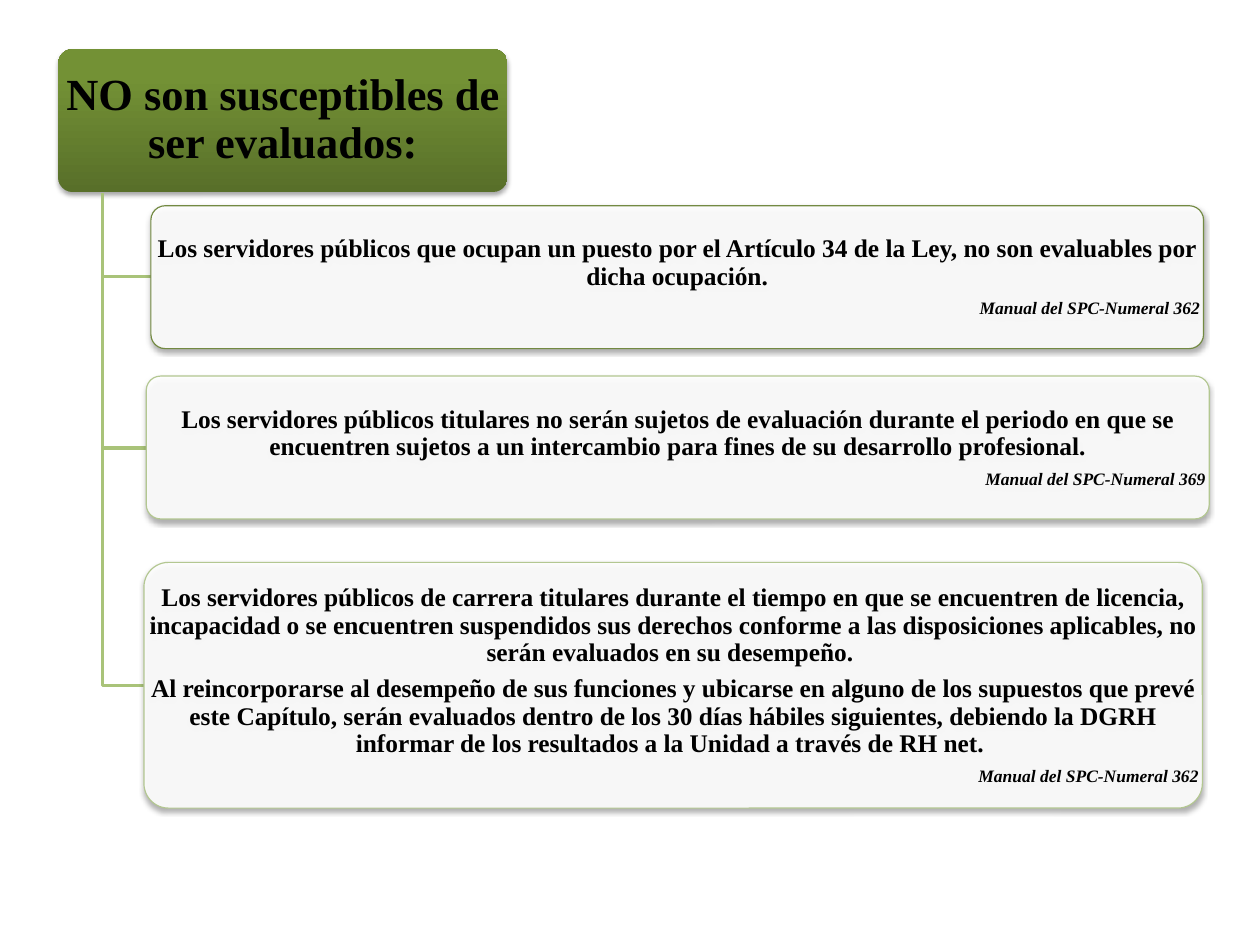
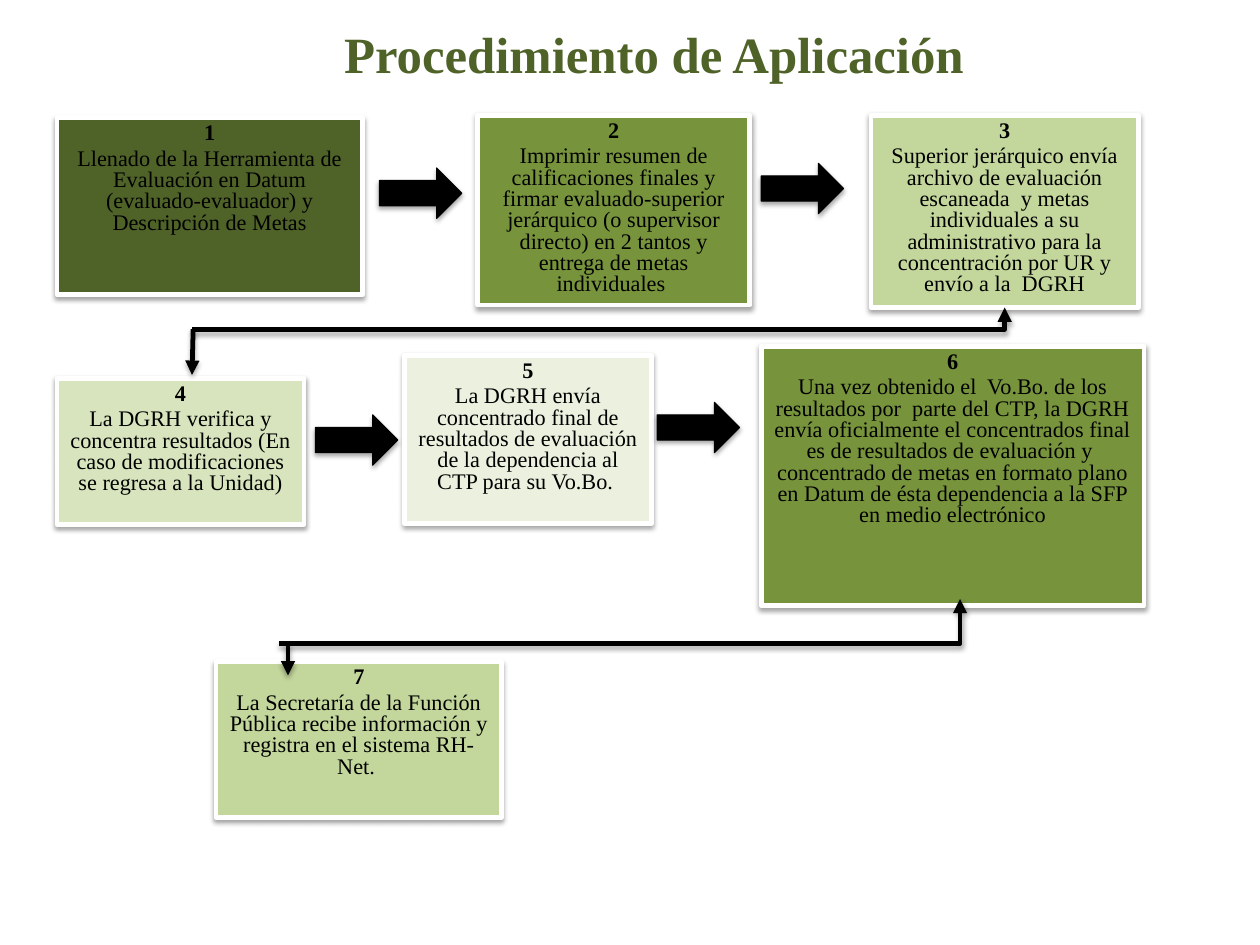
import lxml.etree
import pptx
import pptx.dml.color
import pptx.enum.shapes
import pptx.enum.text
import pptx.oxml.ns
import pptx.util

Inches, Pt = pptx.util.Inches, pptx.util.Pt
RGB = pptx.dml.color.RGBColor.from_string
Shape = pptx.enum.shapes.MSO_SHAPE
Connector = pptx.enum.shapes.MSO_CONNECTOR
Anchor = pptx.enum.text.MSO_ANCHOR
Align = pptx.enum.text.PP_ALIGN
qn = pptx.oxml.ns.qn


class Theme:
    font = "Times New Roman"
    black, white = "000000", "FFFFFF"
    dark, green, soft, pale, mist = "4F6228", "77933C", "C3D69B", "D7E4BD", "EBF1DE"
    header_top, header_bottom = "739135", "586F29"
    branch, first_outline, outline = "A9C379", "738A42", "B3C791"
    title, header, rule, step, citation = 32, 28, 16, 14, 11
    rule_spacing, step_spacing = 0.9, 0.8
    corner = 0.1


def finish(shape, line_color, line_width):
    """Set the outline (None for no line) and the soft shadow below the shape."""
    if line_color:
        shape.line.color.rgb = RGB(line_color)
        shape.line.width = Pt(line_width)
    else:
        shape.line.fill.background()
    effects = lxml.etree.SubElement(shape._element.spPr, qn("a:effectLst"))
    shadow = lxml.etree.SubElement(
        effects, qn("a:outerShdw"), blurRad=str(Pt(3.1)), dist=str(Pt(1.8)),
        dir="5400000", rotWithShape="0")
    color = lxml.etree.SubElement(shadow, qn("a:srgbClr"), val=Theme.black)
    lxml.etree.SubElement(color, qn("a:alpha"), val="35000")


def write(shape, entries, color=Theme.black, anchor=Anchor.TOP, spacing=1.0, gap=0):
    """Fill the shape with (text, size, bold, italic, alignment) paragraphs."""
    frame = shape.text_frame
    frame.word_wrap = True
    frame.vertical_anchor = anchor
    for index, (text, size, bold, italic, alignment) in enumerate(entries):
        paragraph = frame.add_paragraph() if index else frame.paragraphs[0]
        paragraph.text = text
        paragraph.alignment = alignment
        paragraph.line_spacing = spacing
        paragraph.space_before = Pt(gap if index else 0)
        paragraph.font.name = Theme.font
        paragraph.font.size = Pt(size)
        paragraph.font.bold = bold
        paragraph.font.italic = italic
        paragraph.font.color.rgb = RGB(color)


presentation = pptx.Presentation()
presentation.slide_width = pptx.util.Cm(28)
presentation.slide_height = pptx.util.Cm(21)
blank = presentation.slide_layouts[6]

# Slide 1: who is not evaluated
slide = presentation.slides.add_slide(blank)
trunk_x, trunk_top = 0.9, 1.69

header = slide.shapes.add_shape(Shape.ROUNDED_RECTANGLE, Inches(0.51), Inches(0.43),
                                Inches(3.93), Inches(1.25))
header.adjustments[0] = Theme.corner
header.fill.gradient()
header.fill.gradient_angle = 90
for stop, color, position in zip(header.fill.gradient_stops,
                                 (Theme.header_bottom, Theme.header_top), (0, 0.8)):
    stop.color.rgb = RGB(color)
    stop.position = position
finish(header, None, 0)
header.text_frame.margin_left = header.text_frame.margin_right = Inches(0.02)
write(header, [("NO son susceptibles de ser evaluados:", Theme.header, True, False, Align.CENTER)],
      anchor=Anchor.MIDDLE, spacing=Theme.rule_spacing)

# left, top, width, height, branch height, outline, rules, citation
rules = [
    (1.32, 1.8, 9.21, 1.25, 2.42, Theme.first_outline,
     ["Los servidores públicos que ocupan un puesto por el Artículo 34 de la Ley, "
      "no son evaluables por dicha ocupación."],
     "Manual del SPC-Numeral 362"),
    (1.28, 3.29, 9.3, 1.25, 3.92, Theme.outline,
     ["Los servidores públicos titulares no serán sujetos de evaluación durante el periodo "
      "en que se encuentren sujetos a un intercambio para fines de su desarrollo profesional."],
     "Manual del SPC-Numeral 369"),
    (1.26, 4.92, 9.26, 2.15, 6, Theme.outline,
     ["Los servidores públicos de carrera titulares durante el tiempo en que se encuentren de "
      "licencia, incapacidad o se encuentren suspendidos sus derechos conforme a las "
      "disposiciones aplicables, no serán evaluados en su desempeño. ",
      "Al reincorporarse al desempeño de sus funciones y ubicarse en alguno de los supuestos "
      "que prevé este Capítulo, serán evaluados dentro de los 30 días hábiles siguientes, "
      "debiendo la DGRH informar de los resultados a la Unidad a través de RH net. "],
     "Manual del SPC-Numeral 362"),
]
for left, top, width, height, branch_y, outline, texts, citation in rules:
    builder = slide.shapes.build_freeform(Inches(trunk_x), Inches(trunk_top))
    builder.add_line_segments([(Inches(trunk_x), Inches(branch_y)),
                               (Inches(left), Inches(branch_y))], close=False)
    branch = builder.convert_to_shape()
    branch.shadow.inherit = False
    branch.fill.background()
    branch.line.color.rgb = RGB(Theme.branch)
    branch.line.width = Pt(2)

    box = slide.shapes.add_shape(Shape.ROUNDED_RECTANGLE, Inches(left), Inches(top),
                                 Inches(width), Inches(height))
    box.adjustments[0] = Theme.corner
    box.fill.solid()
    box.fill.fore_color.rgb = RGB(Theme.white)
    fill_color = box._element.spPr.find(qn("a:solidFill")).find(qn("a:srgbClr"))
    lxml.etree.SubElement(fill_color, qn("a:alpha"), val="90000")
    finish(box, outline, 0.75)
    # The preset insets its text by 0.29 of the corner radius.
    margin = Inches(0.03 - 0.29 * Theme.corner * height)
    box.text_frame.margin_left = box.text_frame.margin_right = margin
    box.text_frame.margin_top = box.text_frame.margin_bottom = Inches(0)
    entries = [(text, Theme.rule, True, False, Align.CENTER) for text in texts]
    entries.append((citation, Theme.citation, True, True, Align.RIGHT))
    write(box, entries, anchor=Anchor.MIDDLE, spacing=Theme.rule_spacing, gap=5.6)

# Slide 2: procedure
slide = presentation.slides.add_slide(blank)
title = slide.shapes.add_textbox(Inches(0.43), Inches(0.15), Inches(10.59), Inches(0.64))
write(title, [("Procedimiento de Aplicación", Theme.title, True, False, Align.CENTER)],
      color=Theme.dark)

steps = [
    (0.5, 1.03, 2.67, 1.55, Theme.dark,
     "Llenado de la Herramienta de Evaluación en Datum (evaluado-evaluador) y "
     "Descripción de Metas"),
    (4.18, 1.01, 2.38, 1.66, Theme.green,
     "Imprimir resumen de calificaciones finales y firmar evaluado-superior jerárquico "
     "(o supervisor directo) en 2 tantos y entrega de metas individuales "),
    (7.62, 1.01, 2.34, 1.68, Theme.soft,
     "Superior jerárquico envía archivo de evaluación escaneada  y metas individuales a su "
     "administrativo para la concentración por UR y envío a la  DGRH"),
    (0.5, 3.31, 2.16, 1.28, Theme.pale,
     "La DGRH verifica y concentra resultados (En caso de modificaciones se regresa a la Unidad)"),
    (3.54, 3.11, 2.16, 1.47, Theme.mist,
     "La DGRH envía concentrado final de resultados de evaluación de la dependencia al CTP "
     "para su Vo.Bo. "),
    (6.66, 3.03, 3.35, 2.27, Theme.green,
     "Una vez obtenido el  Vo.Bo. de los resultados por  parte del CTP, la DGRH envía "
     "oficialmente el concentrados final es de resultados de evaluación y  concentrado de metas "
     "en formato plano en Datum de ésta dependencia a la SFP en medio electrónico"),
    (1.89, 5.79, 2.5, 1.36, Theme.soft,
     "La Secretaría de la Función Pública recibe información y registra en el sistema RH-Net. "),
]
for number, (left, top, width, height, fill, text) in enumerate(steps, 1):
    box = slide.shapes.add_shape(Shape.RECTANGLE, Inches(left), Inches(top),
                                 Inches(width), Inches(height))
    box.fill.solid()
    box.fill.fore_color.rgb = RGB(fill)
    finish(box, Theme.white, 3)
    write(box, [(str(number), Theme.step, True, False, Align.CENTER),
                (text, Theme.step, False, False, Align.CENTER)],
          spacing=Theme.step_spacing, gap=2.8)

for left, top in [(3.32, 1.47), (6.66, 1.43), (2.76, 3.63), (5.75, 3.52)]:
    arrow = slide.shapes.add_shape(Shape.RIGHT_ARROW, Inches(left), Inches(top),
                                   Inches(0.72), Inches(0.44))
    arrow.fill.solid()
    arrow.fill.fore_color.rgb = RGB(Theme.black)
    finish(arrow, Theme.black, 0.75)

# Each line ends in an arrowhead at its second point.
links = [
    (Connector.ELBOW, 1.68, 2.88, 8.79, 2.69),
    (Connector.ELBOW, 2.44, 5.63, 8.4, 5.24),
    (Connector.STRAIGHT, 2.52, 5.63, 2.52, 5.91),
    (Connector.STRAIGHT, 1.69, 2.88, 1.68, 3.28),
]
for kind, *points in links:
    link = slide.shapes.add_connector(kind, *(Inches(value) for value in points))
    if kind == Connector.ELBOW:
        link._element.spPr.find(qn("a:prstGeom")).set("prst", "bentConnector2")
    finish(link, Theme.black, 3)
    lxml.etree.SubElement(link.line._get_or_add_ln(), qn("a:tailEnd"), type="triangle")

presentation.save("out.pptx")
